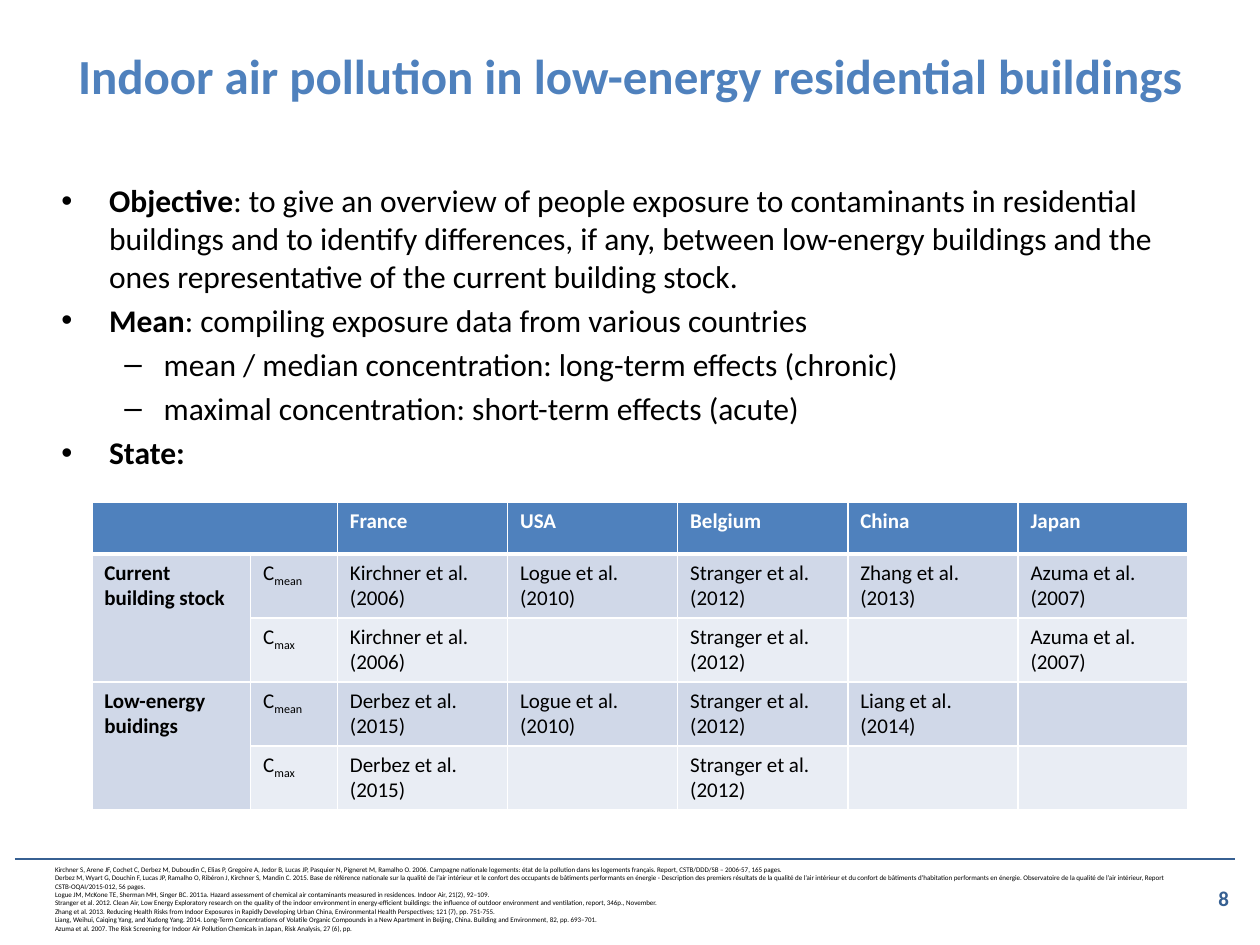
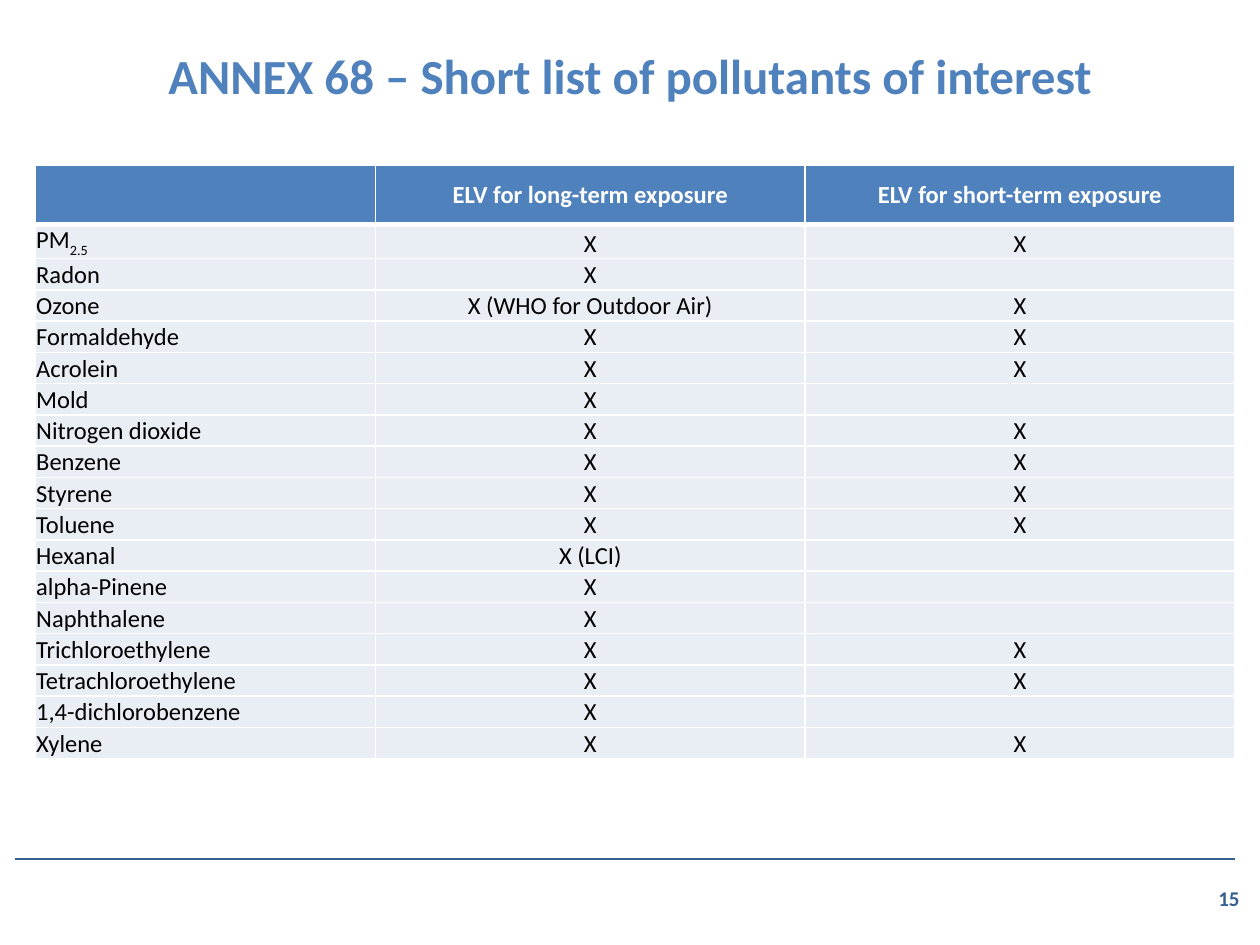
from dataclasses import dataclass

from lxml import etree
from pptx import Presentation
from pptx import util as u
from pptx.dml.color import RGBColor
from pptx.enum import shapes, text
from pptx.oxml import ns


@dataclass(frozen=True)
class Theme:
    """Colours, font and type sizes of the deck."""
    font: str = "Calibri"
    blue: str = "4F81BD"
    navy: str = "376092"
    band: str = "D0D8E8"
    pale: str = "E9EDF4"
    white: str = "FFFFFF"
    black: str = "000000"
    title: int = 28
    body: int = 18
    grid: int = 14
    small: int = 12
    ref: int = 4


T = Theme()
LEFT, MID = text.PP_ALIGN.LEFT, text.PP_ALIGN.CENTER
TOP, CENTRE, BASE = (text.MSO_ANCHOR.TOP, text.MSO_ANCHOR.MIDDLE,
                     text.MSO_ANCHOR.BOTTOM)

POINTS = [
    (0, [("Objective", "b"),
         (": to give an overview of people exposure to contaminants in "
          "residential buildings and to identify differences, if any, between "
          "low-energy buildings and the ones representative of the current "
          "building stock.", "")]),
    (0, [("Mean", "b"), (": compiling exposure data from various countries", "")]),
    (1, [("mean / median concentration: long-term effects (chronic)", "")]),
    (1, [("maximal concentration: short-term effects (acute)", "")]),
    (0, [("State:", "b")]),
]

LEVELS = [("•", 0.96, -0.96), ("–", 2.06, -0.79)]

LANDS = ["France", "USA", "Belgium", "China", "Japan"]
STUDIES = [
    ("Current building stock", "mean",
     ["Kirchner et al. (2006)", "Logue et al. (2010)", "Stranger et al. (2012)",
      "Zhang et al. (2013)", "Azuma et al. (2007)"]),
    ("", "max",
     ["Kirchner et al. (2006)", "", "Stranger et al. (2012)", "",
      "Azuma et al. (2007)"]),
    ("Low-energy buidings", "mean",
     ["Derbez et al. (2015)", "Logue et al. (2010)", "Stranger et al. (2012)",
      "Liang et al. (2014)", ""]),
    ("", "max",
     ["Derbez et al. (2015)", "", "Stranger et al. (2012)", "", ""]),
]

REFS = [
    "Kirchner S, Arene JF, Cochet C, Derbez M, Duboudin C, Elias P, Gregoire A, "
    "Jedor B, Lucas JP, Pasquier N, Pigneret M, Ramalho O. 2006. Campagne "
    "nationale logements: état de la pollution dans les logements français. "
    "Report, CSTB/DDD/SB – 2006-57, 165 pages.",
    "Derbez M, Wyart G, Douchin F, Lucas JP, Ramalho O, Ribéron J, Kirchner S, "
    "Mandin C. 2015. Base de référence nationale sur la qualité de l’air "
    "intérieur et le confort des occupants de bâtiments performants en énergie "
    "- Description des premiers résultats de la qualité de l’air intérieur et "
    "du confort de bâtiments d’habitation performants en énergie. Observatoire "
    "de la qualité de l’air intérieur, Report CSTB-OQAI/2015-012, 56 pages.",
    "Logue JM, McKone TE, Sherman MH, Singer BC. 2011a. Hazard assessment of "
    "chemical air contaminants measured in residences. Indoor Air, 21(2), "
    "92–109.",
    "Stranger et al. 2012. Clean Air, Low Energy Exploratory research on the "
    "quality of the indoor environment in energy‐efficient buildings: the "
    "influence of outdoor environment and ventilation, report, 346p., November.",
    "Zhang et al. 2013. Reducing Health Risks from Indoor Exposures in Rapidly "
    "Developing Urban China, Environmental Health Perspectives; 121 (7), pp. "
    "751-755.",
    "Liang, Weihui, Caiqing Yang, and Xudong Yang. 2014. Long-Term "
    "Concentrations of Volatile Organic Compounds in a New Apartment in "
    "Beijing, China. Building and Environment, 82, pp. 693–701.",
    "Azuma et al. 2007. The Risk Screening for Indoor Air Pollution Chemicals "
    "in Japan, Risk Analysis, 27 (6), pp.",
]

LIMITS = [
    ("Radon", "X", ""),
    ("Ozone", "X (WHO for Outdoor Air)", "X"),
    ("Formaldehyde", "X", "X"),
    ("Acrolein", "X", "X"),
    ("Mold", "X", ""),
    ("Nitrogen dioxide", "X", "X"),
    ("Benzene", "X", "X"),
    ("Styrene", "X", "X"),
    ("Toluene", "X", "X"),
    ("Hexanal", "X (LCI)", ""),
    ("alpha-Pinene", "X", ""),
    ("Naphthalene", "X", ""),
    ("Trichloroethylene", "X", "X"),
    ("Tetrachloroethylene", "X", "X"),
    ("1,4-dichlorobenzene", "X", ""),
    ("Xylene", "X", "X"),
]


def add_runs(para, runs, size, color):
    """Fill a paragraph with (words, style) runs: b is bold, s subscript."""
    for words, style in runs:
        run = para.add_run()
        run.text = words
        run.font.name = T.font
        run.font.size = u.Pt(size)
        run.font.bold = "b" in style
        run.font.color.rgb = RGBColor.from_string(color)
        if "s" in style:
            run.font._element.set("baseline", "-25000")


def add_text(slide, box, paras, size, color, align=LEFT, anchor=TOP):
    """Add a text box with one paragraph for each list of runs."""
    frame = slide.shapes.add_textbox(*map(u.Cm, box)).text_frame
    frame.word_wrap = True
    frame.vertical_anchor = anchor
    for i, runs in enumerate(paras):
        para = frame.add_paragraph() if i else frame.paragraphs[0]
        para.alignment = align
        add_runs(para, runs, size, color)
    return frame


def add_list(slide, box, points):
    """Add a bulleted list of (level, runs)."""
    frame = add_text(slide, box, [runs for _, runs in points], T.body, T.black)
    for para, (level, _) in zip(frame.paragraphs, points):
        mark, left, hang = LEVELS[level]
        para.level = level
        para.space_before = u.Pt(3.6)
        props = para._p.get_or_add_pPr()
        props.set("marL", str(u.Cm(left)))
        props.set("indent", str(u.Cm(hang)))
        face = etree.SubElement(props, ns.qn("a:buFont"))
        face.set("typeface", "Arial")
        etree.SubElement(props, ns.qn("a:buChar")).set("char", mark)


def add_edge(cell, side, width):
    """Draw one white border of a cell."""
    line = etree.SubElement(cell._tc.get_or_add_tcPr(), ns.qn("a:ln" + side))
    line.set("w", str(u.Pt(width)))
    fill = etree.SubElement(line, ns.qn("a:solidFill"))
    etree.SubElement(fill, ns.qn("a:srgbClr")).set("val", T.white)


def fill_cell(cell, runs, row, size, fill, align=LEFT, anchor=TOP, inset=None):
    """Set the borders, fill and words of a cell; row 0 is the header."""
    for side in "LRTB":
        thick = (row, side) in ((0, "B"), (1, "T"))
        add_edge(cell, side, 3 if thick else 1)
    cell.fill.solid()
    cell.fill.fore_color.rgb = RGBColor.from_string(fill)
    cell.vertical_anchor = anchor
    if inset is not None:
        cell.margin_left = cell.margin_right = cell.margin_top = u.Cm(inset)
        cell.margin_bottom = 0
    para = cell.text_frame.paragraphs[0]
    para.alignment = align
    if runs:
        add_runs(para, runs, size, T.black if row else T.white)
    else:
        end = etree.SubElement(para._p, ns.qn("a:endParaRPr"))
        end.set("sz", str(size * 100))


def add_grid(slide, left, top, cols, rows):
    """Add an empty table with the given column widths and row heights."""
    box = map(u.Cm, (left, top, sum(cols), sum(rows)))
    grid = slide.shapes.add_table(len(rows), len(cols), *box).table
    for col, width in zip(grid.columns, cols):
        col.width = u.Cm(width)
    for row, height in zip(grid.rows, rows):
        row.height = u.Cm(height)
    return grid


def add_base(deck, title, page):
    """Add a slide with its title, page number and footer line."""
    slide = deck.slides.add_slide(deck.slide_layouts[6])
    add_text(slide, (1.27, -0.08, 22.86, 3.18), [[(title, "b")]],
             T.title, T.blue, MID, CENTRE)
    add_text(slide, (24.31, 17.6, 1.09, 1.02), [[(str(page), "b")]],
             T.small, T.navy, anchor=CENTRE)
    ends = map(u.Cm, (0.3, 17.32, 24.89, 17.32))
    line = slide.shapes.add_connector(shapes.MSO_CONNECTOR.STRAIGHT, *ends)
    line.line.color.rgb = RGBColor.from_string(T.navy)
    line.line.width = u.Pt(1)
    etree.SubElement(line._element.spPr, ns.qn("a:effectLst"))
    return slide


def add_studies(slide):
    """Add the table of studies by country and building type."""
    grid = add_grid(slide, 1.85, 10.13, [3.2, 1.75] + [3.43] * 5,
                    [1.04] + [1.29] * 4)
    rows = [[[], []] + [[(land, "b")] for land in LANDS]]
    for stock, kind, cites in STUDIES:
        rows.append([[(stock, "b")] if stock else [], [("C", ""), (kind, "s")]]
                    + [[(cite, "")] if cite else [] for cite in cites])
    for r, row in enumerate(rows):
        shade = T.band if r % 2 else T.pale
        for c, runs in enumerate(row):
            fill = T.blue if r == 0 else T.band if c == 0 else shade
            fill_cell(grid.cell(r, c), runs, r, T.small, fill)
    grid.cell(0, 0).merge(grid.cell(0, 1))
    for r in (1, 3):
        grid.cell(r, 0).merge(grid.cell(r + 1, 0))


def add_limits(slide):
    """Add the table of pollutants and their exposure limits."""
    rows = [[[]] + [[(f"ELV for {term}-term exposure", "b")]
                    for term in ("long", "short")],
            [[("PM", ""), ("2.5", "s")], [("X", "")], [("X", "")]]]
    rows += [[[(word, "")] if word else [] for word in row] for row in LIMITS]
    grid = add_grid(slide, 0.71, 3.33, [6.86, 8.66, 8.66],
                    [1.19] + [0.63] * (len(rows) - 1))
    for r, row in enumerate(rows):
        for c, runs in enumerate(row):
            fill_cell(grid.cell(r, c), runs, r, T.grid,
                      T.pale if r else T.blue, MID if c else LEFT,
                      BASE if r else CENTRE, 0.02)


def main():
    """Build and save the two slides."""
    deck = Presentation()
    deck.slide_width, deck.slide_height = u.Cm(25.4), u.Cm(19.05)

    slide = add_base(
        deck, "Indoor air pollution in low-energy residential buildings", 8)
    add_list(slide, (0.99, 3.53, 22.86, 12.57), POINTS)
    add_studies(slide)
    add_text(slide, (0.86, 17.32, 23.04, 1.73), [[(ref, "")] for ref in REFS],
             T.ref, T.black)

    slide = add_base(deck, "ANNEX 68 – Short list of pollutants of interest", 15)
    add_limits(slide)

    deck.save("out.pptx")


if __name__ == "__main__":
    main()
